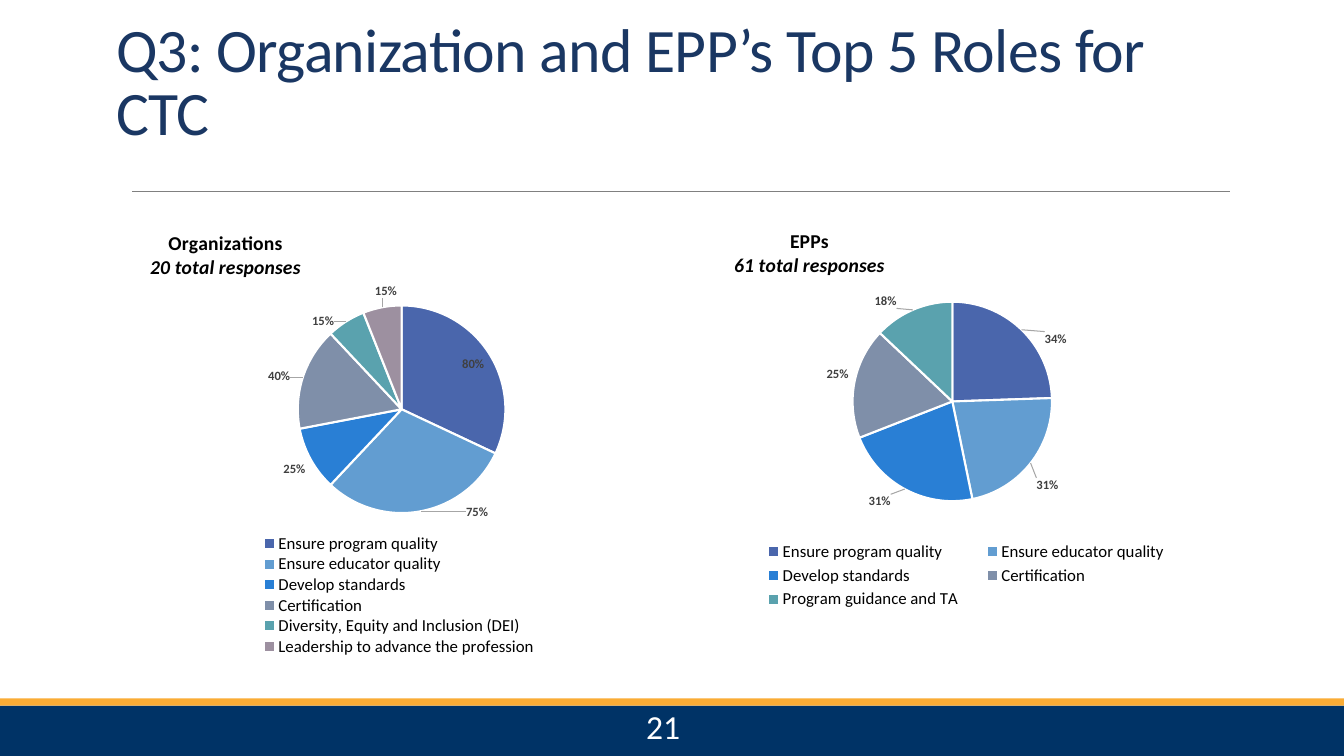
from lxml import etree
from pptx import Presentation
from pptx.chart.data import CategoryChartData
from pptx.dml.color import RGBColor
from pptx.enum.chart import XL_CHART_TYPE, XL_LABEL_POSITION, XL_LEGEND_POSITION
from pptx.enum.shapes import MSO_CONNECTOR, MSO_SHAPE
from pptx.enum.text import MSO_ANCHOR, MSO_AUTO_SIZE, PP_ALIGN
from pptx.oxml import parse_xml
from pptx.oxml.ns import nsdecls, qn
from pptx.util import Cm, Pt

PIE = XL_CHART_TYPE.PIE
IN_END = XL_LABEL_POSITION.INSIDE_END
OUT_END = XL_LABEL_POSITION.OUTSIDE_END
FONT = "Calibri"
COLORS = {"navy": "003366", "gold": "FAAC35", "rule": "808080", "title": "1A3763",
          "white": "FFFFFF", "black": "000000", "label": "404040", "leader": "A6A6A6"}
SLICES = ["4A66AC", "629DD1", "297FD5", "7F8FA9", "5AA2AE", "9D90A0"]


def set_font(font, size, color, bold=False):
    font.name, font.size, font.bold = FONT, Pt(size), bold
    font.color.rgb = RGBColor.from_string(COLORS[color])


def set_layout(element, index, x, y, w=None, h=None, inner=False):
    """Place a chart part by fractions of the chart area."""
    for old in element.findall(qn("c:layout")):
        element.remove(old)
    layout = etree.Element(qn("c:layout"))
    manual = etree.SubElement(layout, qn("c:manualLayout"))
    values = [("layoutTarget", "inner")] if inner else []
    if element.tag != qn("c:dLbl"):
        values += [("xMode", "edge"), ("yMode", "edge")]
    values += [("x", x), ("y", y), ("w", w), ("h", h)]
    for name, value in values:
        if value is not None:
            etree.SubElement(manual, qn("c:" + name)).set("val", str(value))
    element.insert(index, layout)


prs = Presentation()
prs.slide_width, prs.slide_height = Cm(33.87), Cm(19.05)
s = prs.slides.add_slide(prs.slide_layouts[5])

# Footer bands
for top, height, color in [(17.78, 1.27, "navy"), (17.6, 0.18, "gold")]:
    sp = s.shapes.add_shape(MSO_SHAPE.RECTANGLE, 0, Cm(top), prs.slide_width, Cm(height))
    sp.shadow.inherit = False
    sp.fill.solid()
    sp.fill.fore_color.rgb = RGBColor.from_string(COLORS[color])
    sp.line.fill.background()

# Rule below the title
rule = s.shapes.add_connector(MSO_CONNECTOR.STRAIGHT, Cm(3.33), Cm(4.83), Cm(31), Cm(4.83))
rule.line.color.rgb = RGBColor.from_string(COLORS["rule"])
rule.line.width = Pt(0.5)
etree.SubElement(rule._element.spPr, qn("a:effectLst"))

# Title
title = s.shapes.title
title.left, title.top, title.width, title.height = Cm(2.67), Cm(-0.18), Cm(28.88), Cm(4.04)
tf = title.text_frame
tf.text = "Q3: Organization and EPP’s Top 5 Roles for CTC"
tf.word_wrap, tf.auto_size = True, MSO_AUTO_SIZE.NONE
tf.vertical_anchor = MSO_ANCHOR.BOTTOM
p = tf.paragraphs[0]
p.alignment, p.line_spacing = PP_ALIGN.LEFT, 0.85
set_font(p.font, 44.1, "title")
p.runs[0]._r.get_or_add_rPr().set("spc", "-50")

# Slide number
tf = s.shapes.add_textbox(0, Cm(17.5), Cm(33.43), Cm(1.6)).text_frame
tf.text = "21"
tf.word_wrap, tf.vertical_anchor = True, MSO_ANCHOR.MIDDLE
p = tf.paragraphs[0]
p.alignment = PP_ALIGN.CENTER
set_font(p.font, 24, "white")

# Pie charts; a label shift moves it from its place at the slice's edge
shared = ["Ensure program quality", "Ensure educator quality", "Develop standards",
          "Certification"]
pies = [
    {"at": (2.82, 5.38, 14.78, 11.18),
     "heading": ("Organizations", "20 total responses"), "heading_at": (0.06, 0.03),
     "cats": shared + ["Diversity, Equity and Inclusion (DEI)",
                       "Leadership to advance the profession"],
     "vals": [0.8, 0.75, 0.25, 0.4, 0.15, 0.15],
     "plot": (0.317, 0.119, 0.354, 0.645), "legend": (0.25, 0.72, 0.48, 0.28),
     "shifts": [None, (0.075, -0.027), (0, 0), (-0.012, 0.018), (-0.015, 0.027),
                (0.027, -0.007)]},
    {"at": (16.94, 4.83, 14.12, 11.18),
     "heading": ("EPPs", "61 total responses"), "heading_at": (0.105, 0.075),
     "cats": shared + ["Program guidance and TA"],
     "vals": [0.34, 0.31, 0.31, 0.25, 0.18],
     "plot": (0.322, 0.178, 0.356, 0.59), "legend": (0.13, 0.78, 0.79, 0.17),
     "shifts": [(0.034, 0.047), (0.002, 0.025), (-0.02, 0), (0, 0), (-0.025, 0.009)]},
]
for pie in pies:
    data = CategoryChartData(number_format="0%")
    data.categories = pie["cats"]
    data.add_series("Series 1", pie["vals"])
    chart = s.shapes.add_chart(PIE, *map(Cm, pie["at"]), data).chart
    set_font(chart.font, 10, "black")
    plot = chart.plots[0]
    plot.vary_by_categories = True
    set_layout(chart._chartSpace.chart.plotArea, 0, *pie["plot"], inner=True)

    # Heading
    chart.has_title = True
    tf = chart.chart_title.text_frame
    for i, text in enumerate(pie["heading"]):
        p = tf.add_paragraph() if i else tf.paragraphs[0]
        r = p.add_run()
        r.text = text
        set_font(r.font, 14, "black", bold=True)
        r.font.italic = i == 1
    set_layout(chart.chart_title._element, 1, *pie["heading_at"])

    # Legend
    chart.has_legend = True
    legend = chart.legend
    legend.position = XL_LEGEND_POSITION.BOTTOM
    legend.include_in_layout = False
    set_font(legend.font, 12, "black")
    set_layout(legend._element, 1, *pie["legend"])

    # Series labels and leader lines
    series = plot.series[0]
    labels = series.data_labels
    labels.show_value = True
    labels.number_format, labels.number_format_is_linked = "0%", False
    labels.position = OUT_END
    set_font(labels.font, 9, "label", bold=True)
    dLbls = labels._element
    for old in dLbls.findall(qn("c:showLeaderLines")):
        dLbls.remove(old)
    etree.SubElement(dLbls, qn("c:showLeaderLines")).set("val", "1")
    dLbls.append(parse_xml(
        f'<c:leaderLines {nsdecls("c", "a")}><c:spPr><a:ln w="9525"><a:solidFill>'
        f'<a:srgbClr val="{COLORS["leader"]}"/></a:solidFill></a:ln></c:spPr></c:leaderLines>'))

    # Slices
    for i, shift in enumerate(pie["shifts"]):
        point = series.points[i]
        point.format.fill.solid()
        point.format.fill.fore_color.rgb = RGBColor.from_string(SLICES[i])
        point.format.line.color.rgb = RGBColor.from_string(COLORS["white"])
        point.format.line.width = Pt(1.5)
        label = point.data_label
        set_font(label.font, 9, "label", bold=True)
        label.position = OUT_END if shift else IN_END
        if shift and any(shift):
            set_layout(dLbls.findall(qn("c:dLbl"))[i], 1, *shift)

prs.save("out.pptx")
